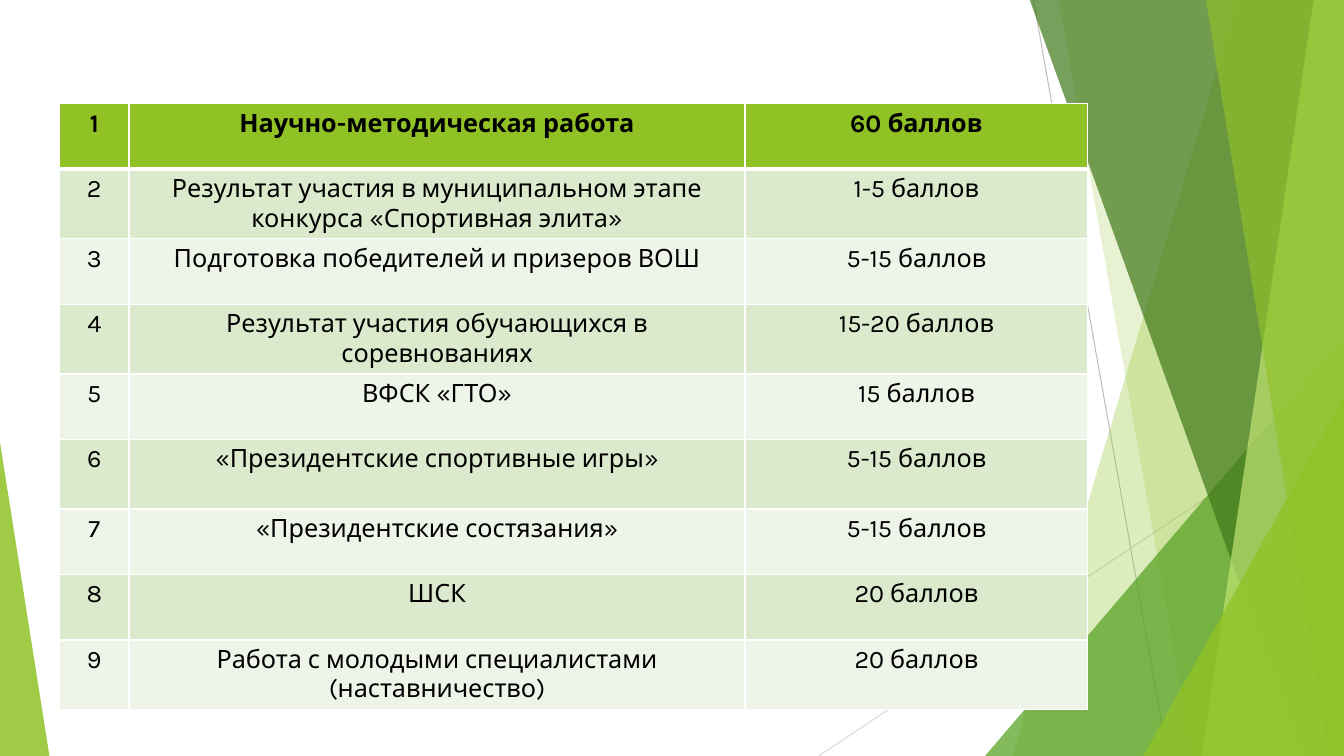
from lxml import etree
from pptx import Presentation
from pptx.dml.color import RGBColor
from pptx.enum.shapes import MSO_CONNECTOR, MSO_SHAPE
from pptx.enum.text import PP_ALIGN
from pptx.oxml.ns import qn
from pptx.util import Inches, Pt

STRAIGHT = MSO_CONNECTOR.STRAIGHT
TRIANGLE = MSO_SHAPE.ISOSCELES_TRIANGLE
CENTER = PP_ALIGN.CENTER

FONT = "Karla"
SLIDE_WIDTH, SLIDE_HEIGHT = 13.33, 7.5
BAND_TOP = -0.01
COLORS = {
    "lime": "90C226",
    "green": "54A021",
    "forest": "3F7819",
    "pale lime": "C0E474",
    "gray": "BFBFBF",
    "light gray": "D9D9D9",
    "dark row": "DBE9CD",
    "light row": "EEF4E8",
    "white": "FFFFFF",
    "black": "000000",
}

COLUMN_WIDTHS = [0.69, 6.11, 3.4]
ROW_HEIGHT, TALL_ROW_HEIGHT = 0.65, 0.69
TALL_ROWS = {2, 4, 6, 9}
CRITERIA = [
    ("Научно-методическая работа", "60 баллов"),
    ("Результат участия в муниципальном этапе конкурса «Спортивная элита»", "1-5 баллов"),
    ("Подготовка победителей и призеров ВОШ", "5-15 баллов"),
    ("Результат участия обучающихся в соревнованиях", "15-20 баллов"),
    ("ВФСК «ГТО»", "15 баллов"),
    ("«Президентские спортивные игры»", "5-15 баллов"),
    ("«Президентские состязания»", "5-15 баллов"),
    ("ШСК", "20 баллов"),
    ("Работа с молодыми специалистами (наставничество)", "20 баллов"),
]


def rgb(name):
    return RGBColor.from_string(COLORS[name])


def add_line(slide, start, end, color):
    line = slide.shapes.add_connector(STRAIGHT, *map(Inches, start + end))
    line.line.color.rgb = rgb(color)
    line.line.width = Pt(0.75)
    etree.SubElement(line._element.spPr, qn("a:effectLst"))


def paint(shape, color, opacity):
    """Give the shape a translucent fill without outline or shadow."""
    shape.shadow.inherit = False
    shape.line.fill.background()
    shape.fill.solid()
    shape.fill.fore_color.rgb = rgb(color)
    color_element = shape._element.spPr.find(qn("a:solidFill"))[0]
    etree.SubElement(color_element, qn("a:alpha"), val=str(opacity * 1000))


def add_band(slide, top_left, bottom_left, color, opacity):
    """Draw a slanted band that reaches the right edge of the slide."""
    corners = [
        (SLIDE_WIDTH, BAND_TOP),
        (SLIDE_WIDTH, SLIDE_HEIGHT),
        (bottom_left, SLIDE_HEIGHT),
    ]
    builder = slide.shapes.build_freeform(Inches(top_left), Inches(BAND_TOP))
    builder.add_line_segments([(Inches(x), Inches(y)) for x, y in corners])
    paint(builder.convert_to_shape(), color, opacity)


def add_triangle(slide, left, top, width, apex, color, opacity):
    """Draw a triangle that stands on the bottom edge of the slide."""
    height = SLIDE_HEIGHT - top
    shape = slide.shapes.add_shape(TRIANGLE, *map(Inches, (left, top, width, height)))
    shape.adjustments[0] = apex
    paint(shape, color, opacity)


def add_decoration(slide):
    add_line(slide, (10.25, 0), (11.58, 7.5), "gray")
    add_line(slide, (13.33, 4.03), (8.12, 7.5), "light gray")
    add_band(slide, 12.28, 10.04, "lime", 30)
    add_band(slide, 10.5, 11.83, "lime", 20)
    add_triangle(slide, 9.77, 3.33, 3.56, 1, "green", 72)
    add_band(slide, 10.21, 12.91, "forest", 70)
    add_band(slide, 13.03, 11.92, "pale lime", 70)
    add_band(slide, 11.96, 13.18, "lime", 65)
    add_triangle(slide, 11.34, 3.93, 1.99, 1, "lime", 80)
    add_triangle(slide, 0, 4.39, 0.49, 0, "lime", 85)


def set_borders(cell, top, bottom):
    properties = cell._tc.get_or_add_tcPr()
    for side, width in (("L", 1), ("R", 1), ("T", top), ("B", bottom)):
        border = etree.SubElement(properties, qn(f"a:ln{side}"), w=str(Pt(width)))
        fill = etree.SubElement(border, qn("a:solidFill"))
        etree.SubElement(fill, qn("a:srgbClr"), val=COLORS["white"])


def fill_cell(cell, text, color, bold):
    cell.fill.solid()
    cell.fill.fore_color.rgb = rgb(color)
    cell.text_frame.text = text
    paragraph = cell.text_frame.paragraphs[0]
    paragraph.alignment = CENTER
    font = paragraph.runs[0].font
    font.name = FONT
    font.size = Pt(18)
    font.bold = bold
    font.color.rgb = rgb("black")


def add_criteria_table(slide):
    heights = [
        TALL_ROW_HEIGHT if number in TALL_ROWS else ROW_HEIGHT
        for number in range(1, len(CRITERIA) + 1)
    ]
    table = slide.shapes.add_table(
        len(CRITERIA), len(COLUMN_WIDTHS), Inches(0.59), Inches(1.03),
        Inches(sum(COLUMN_WIDTHS)), Inches(sum(heights)),
    ).table
    for column, width in zip(table.columns, COLUMN_WIDTHS):
        column.width = Inches(width)
    for index, (criterion, points) in enumerate(CRITERIA):
        row = table.rows[index]
        row.height = Inches(heights[index])
        is_header = index == 0
        color = "lime" if is_header else ("light row", "dark row")[index % 2]
        for cell, text in zip(row.cells, (str(index + 1), criterion, points)):
            set_borders(cell, 3 if index == 1 else 1, 3 if is_header else 1)
            fill_cell(cell, text, color, is_header)


def main():
    presentation = Presentation()
    presentation.slide_width = Inches(SLIDE_WIDTH)
    presentation.slide_height = Inches(SLIDE_HEIGHT)
    slide = presentation.slides.add_slide(presentation.slide_layouts[6])
    add_decoration(slide)
    add_criteria_table(slide)
    presentation.save("out.pptx")


if __name__ == "__main__":
    main()
